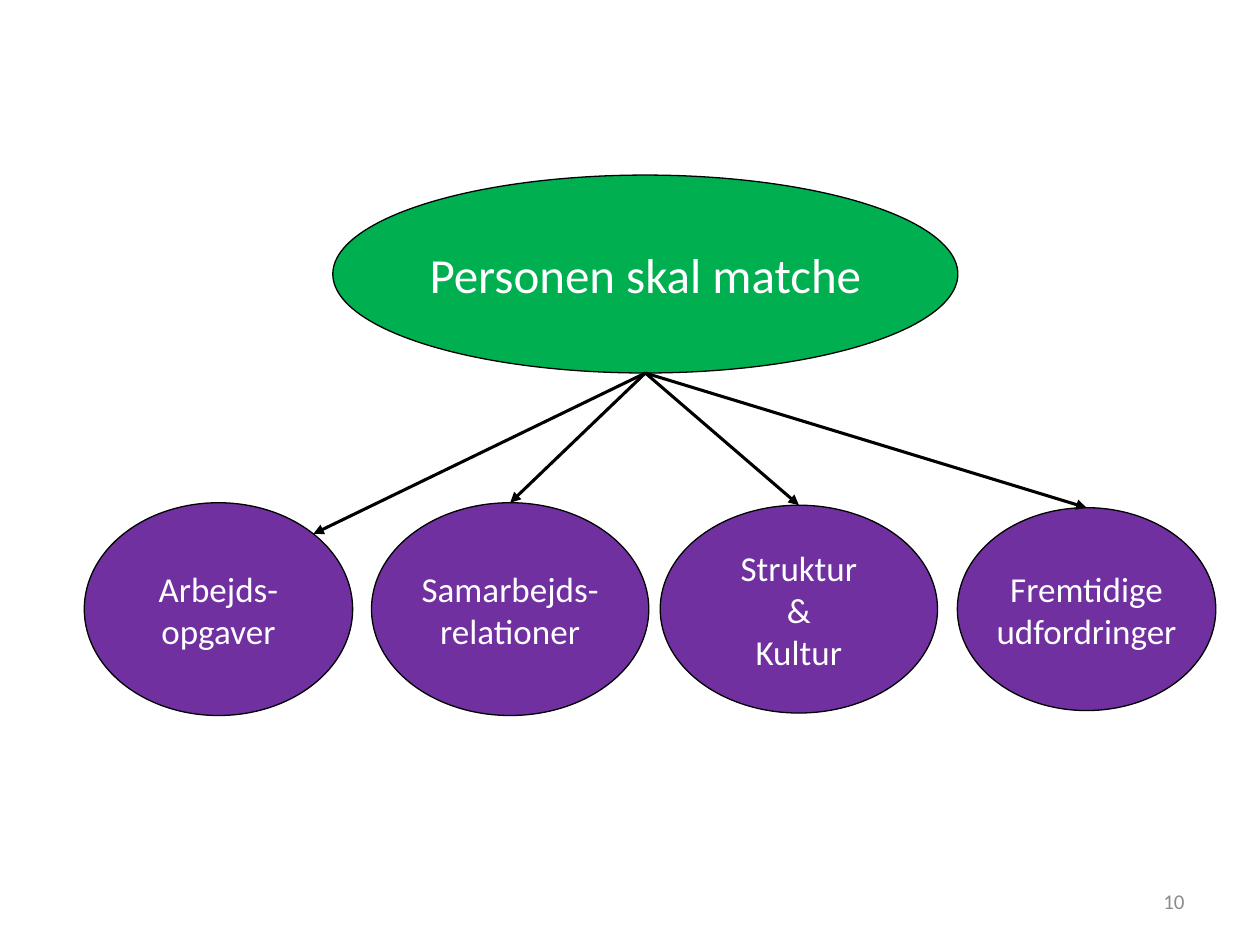
import math

import pptx
import pptx.dml.color
import pptx.enum.shapes
import pptx.enum.text
import pptx.oxml
import pptx.oxml.ns
import pptx.util

Cm = pptx.util.Cm
ALIGN = pptx.enum.text.PP_ALIGN

PERSON = {"left": 6.71, "top": 3.53, "width": 12.6, "height": 3.99}
ROW_CENTER = 12.28
DEMANDS = [
    {"lines": ["Arbejds-opgaver"], "left": 1.7, "width": 5.41, "height": 4.29, "angle": 45},
    {"lines": ["Samarbejds-relationer"], "left": 7.49, "width": 5.59, "height": 4.29, "angle": 90},
    {"lines": ["Struktur", "&", "Kultur"], "left": 13.31, "width": 5.59, "height": 4.19, "angle": 90},
    {"lines": ["Fremtidige udfordringer"], "left": 19.3, "width": 5.21, "height": 4.09, "angle": 90},
]
FRAME_FORMAT = {"word_wrap": True, "vertical_anchor": pptx.enum.text.MSO_ANCHOR.MIDDLE}
NO_MARGINS = {f"margin_{side}": 0 for side in ("left", "top", "right", "bottom")}


def color(value):
    return pptx.dml.color.RGBColor.from_string(value)


def apply_format(target, values):
    for name, value in values.items():
        setattr(target, name, value)


def write_text(shape, lines, size, text_color, alignment, frame_format):
    frame = shape.text_frame
    apply_format(frame, frame_format)
    frame.text = "\n".join(lines)
    for paragraph in frame.paragraphs:
        paragraph.alignment = alignment
        apply_format(paragraph.font, {"name": "Calibri", "size": pptx.util.Pt(size)})
        paragraph.font.color.rgb = color(text_color)


def add_ellipse(slide, left, top, width, height, fill, lines, size):
    shape = slide.shapes.add_shape(
        pptx.enum.shapes.MSO_SHAPE.OVAL, Cm(left), Cm(top), Cm(width), Cm(height))
    shape.shadow.inherit = False
    shape.fill.solid()
    shape.fill.fore_color.rgb = color(fill)
    shape.line.color.rgb = color("000000")
    shape.line.width = pptx.util.Pt(0.75)
    write_text(shape, lines, size, "FFFFFF", ALIGN.CENTER, FRAME_FORMAT | NO_MARGINS)


def add_arrow(slide, start, end):
    connector = slide.shapes.add_connector(
        pptx.enum.shapes.MSO_CONNECTOR.STRAIGHT, *map(Cm, start + end))
    connector.line.color.rgb = color("000000")
    connector.line.width = pptx.util.Pt(1.75)
    line = connector.line._get_or_add_ln()
    head = pptx.oxml.ns.qn("a:tailEnd")
    line.append(line.makeelement(head, {"type": "triangle"}))
    properties = connector._element.spPr
    properties.append(properties.makeelement(pptx.oxml.ns.qn("a:effectLst"), {}))


def add_demand(slide, demand, start):
    left, width, height = (demand[name] for name in ("left", "width", "height"))
    add_ellipse(slide, left, ROW_CENTER - height / 2, width, height,
                "7030A0", demand["lines"], 20)
    angle = math.radians(demand["angle"])
    end = (left + width / 2 * (1 + math.cos(angle)),
           ROW_CENTER - height / 2 * math.sin(angle))
    add_arrow(slide, start, end)


def add_page_number(slide, number):
    box = slide.shapes.add_textbox(Cm(18.2), Cm(17.66), Cm(5.93), Cm(1.01))
    write_text(box, [number], 12, "8C8C8C", ALIGN.RIGHT, FRAME_FORMAT)


def main():
    presentation = pptx.Presentation()
    apply_format(presentation, {"slide_width": Cm(25.4), "slide_height": Cm(19.05)})
    slide = presentation.slides.add_slide(presentation.slide_layouts[6])
    add_page_number(slide, "10")
    add_ellipse(slide, **PERSON, fill="00B050", lines=["Personen skal matche"], size=28)
    start = (PERSON["left"] + PERSON["width"] / 2, PERSON["top"] + PERSON["height"])
    for demand in DEMANDS:
        add_demand(slide, demand, start)
    presentation.save("out.pptx")


if __name__ == "__main__":
    main()
